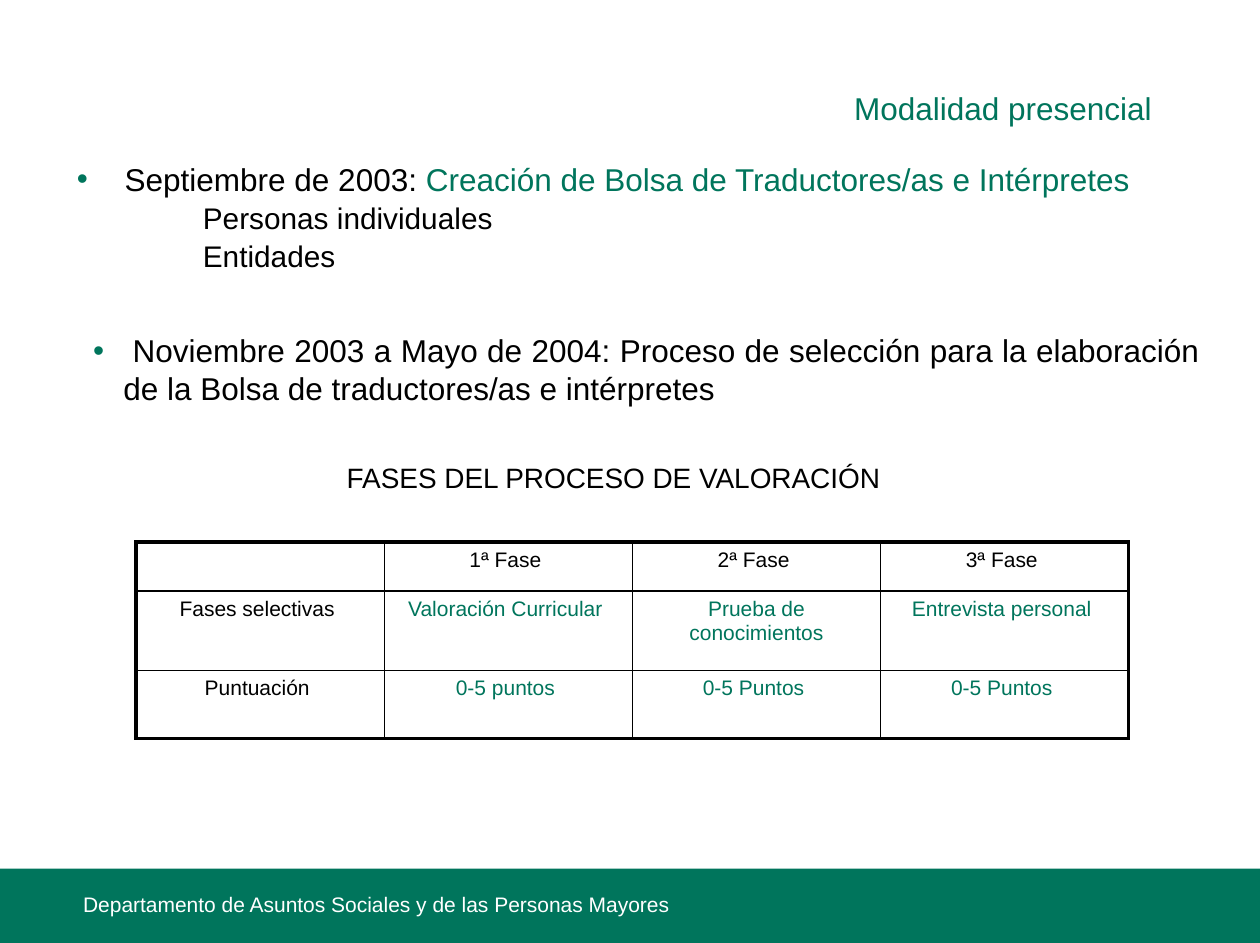
"""Build the slide on the in-person mode and its selection phases."""
from lxml import etree
from pptx import Presentation, util as u
from pptx.dml.color import RGBColor
from pptx.enum import shapes, text
from pptx.oxml.ns import qn

GREEN, BLACK, WHITE = "00755C", "000000", "FFFFFF"
LEFT, MID, RIGHT, JUST = (text.PP_ALIGN.LEFT, text.PP_ALIGN.CENTER,
                          text.PP_ALIGN.RIGHT, text.PP_ALIGN.JUSTIFY)


def color(code):
    return RGBColor.from_string(code)


def write(para, runs, align):
    para.alignment = align
    for words, size, code in runs:
        run = para.add_run()
        run.text = words
        run.font.name = "Arial"
        run.font.size = u.Pt(size)
        run.font.color.rgb = color(code)


prs = Presentation()
prs.slide_width, prs.slide_height = u.Inches(10), u.Inches(7.481)
slide = prs.slides.add_slide(prs.slide_layouts[6])

band = slide.shapes.add_shape(shapes.MSO_SHAPE.RECTANGLE, u.Inches(-0.02), u.Inches(6.89),
                              u.Inches(10.02), u.Inches(0.59))
band.shadow.inherit = False
band.fill.solid()
band.fill.fore_color.rgb = color(GREEN)
band.line.fill.background()

boxes = [
    ((0.66, 7.07, 7.3, 0.24), False, 1, [
        ([("Departamento de Asuntos Sociales y de las Personas Mayores", 12, WHITE)],
         LEFT, 0, 0)]),
    ((0.61, 1.3, 8.71, 0.95), False, 0.9, [
        ([("Septiembre de 2003:", 18, BLACK),
          (" Creación de Bolsa de Traductores/as e Intérpretes", 18, GREEN)],
         JUST, 0.38, -0.38),
        ([("Personas individuales", 17, BLACK)], LEFT, 1.25, -0.25),
        ([("Entidades", 17, BLACK)], LEFT, 1.25, -0.25)]),
    ((0.64, 2.58, 8.98, 0.7), True, 1, [
        ([(" Noviembre 2003 a Mayo de 2004: Proceso de selección para la elaboración "
           "de la Bolsa de traductores/as e intérpretes", 18, BLACK)], JUST, 0.24, -0.24)]),
    ((0.3, 3.58, 9.21, 0.85), True, 1, [
        ([("FASES DEL PROCESO DE VALORACIÓN", 16, BLACK), (" ", 18, BLACK)], MID, 0, 0)]),
]
title = ((4.58, 0.66, 4.73, 0.4), True, 1, [
    ([("Modalidad presencial ", 18, GREEN)], RIGHT, 0, 0)])
for place, inset, space, paras in boxes + [title]:
    frame = slide.shapes.add_textbox(*map(u.Inches, place)).text_frame
    frame.word_wrap = True
    if not inset:
        frame.margin_left = frame.margin_right = frame.margin_top = frame.margin_bottom = 0
    for i, (runs, align, margin, indent) in enumerate(paras):
        para = frame.add_paragraph() if i else frame.paragraphs[0]
        para.line_spacing = space
        if i:
            para.space_before = u.Pt(3.4)
        props = para._p.get_or_add_pPr()
        props.set("marL", str(u.Inches(margin)))
        props.set("indent", str(u.Inches(indent)))
        if align == JUST:
            tint = etree.SubElement(props, qn("a:buClr"))
            etree.SubElement(tint, qn("a:srgbClr"), val=GREEN)
            etree.SubElement(props, qn("a:buFont"), typeface="Arial")
            etree.SubElement(props, qn("a:buChar"), char="•")
        write(para, runs, align)

rows = [
    ["", "1ª Fase ", "2ª Fase ", "3ª Fase "],
    ["Fases selectivas ", "Valoración Curricular ", "Prueba de conocimientos",
     "Entrevista personal "],
    ["Puntuación ", "0-5 puntos ", "0-5 Puntos ", "0-5 Puntos "],
]
table = slide.shapes.add_table(3, 4, u.Inches(1.08), u.Inches(4.3),
                               u.Inches(7.88), u.Inches(1.56)).table
table.first_row = table.horz_banding = False
for col in table.columns:
    col.width = u.Inches(1.97)
for row, high in zip(table.rows, (0.39, 0.63, 0.54)):
    row.height = u.Inches(high)
for r, row in enumerate(rows):
    for c, words in enumerate(row):
        cell = table.cell(r, c)
        cell.fill.background()
        if words:
            write(cell.text_frame.paragraphs[0],
                  [(words, 12, GREEN if r and c else BLACK)], MID)
        else:
            cell.margin_top = cell.margin_bottom = 0
        edges = {"L": c == 0, "R": c == 3, "T": r == 0, "B": r == 2}
        for i, (side, outer) in enumerate(edges.items()):
            line = etree.Element(qn("a:ln" + side), w=str(u.Pt(2.25 if outer else 1)))
            fill = etree.SubElement(line, qn("a:solidFill"))
            etree.SubElement(fill, qn("a:srgbClr"), val=BLACK)
            cell._tc.get_or_add_tcPr().insert(i, line)

prs.save("out.pptx")
